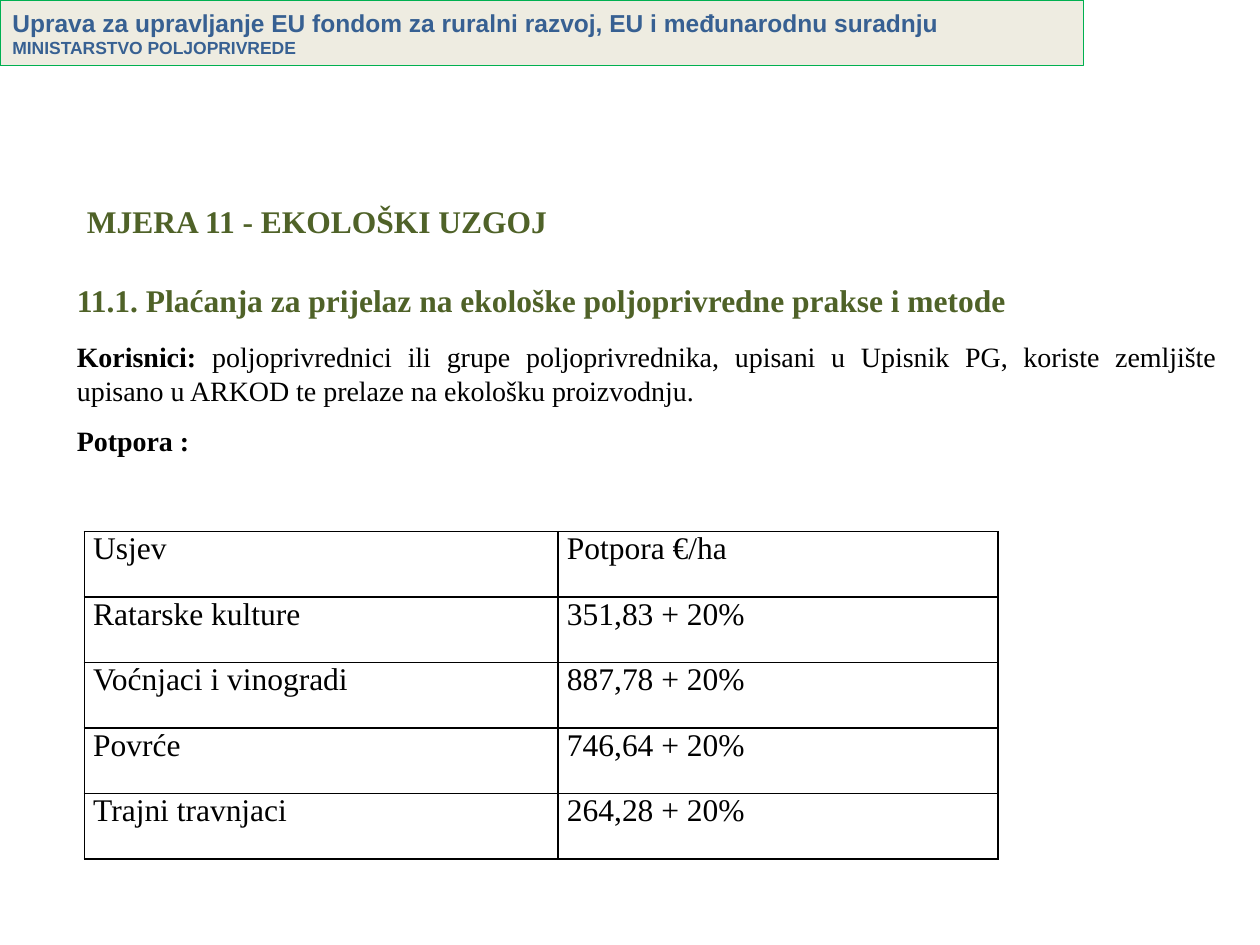
from lxml import etree
from pptx import Presentation
from pptx.dml.color import RGBColor
from pptx.enum.shapes import MSO_SHAPE as Shape
from pptx.enum.text import MSO_ANCHOR as Anchor, PP_ALIGN as Align
from pptx.oxml.ns import qn
from pptx.util import Inches, Pt

GREEN, BLUE, BLACK, WHITE = "4F6228", "376092", "000000", "FFFFFF"
SERIF = "Times New Roman"
CROPS = [
    ("Usjev", "Potpora €/ha"),
    ("Ratarske kulture", "351,83 + 20%"),
    ("Voćnjaci i vinogradi", "887,78 + 20%"),
    ("Povrće", "746,64 + 20%"),
    ("Trajni travnjaci", "264,28 + 20%"),
]


def rgb(value):
    return RGBColor.from_string(value)


def style(font, size, color=BLACK, bold=False, name=SERIF):
    font.name, font.size, font.bold = name, Pt(size), bold
    font.color.rgb = rgb(color)


def place(shape, left, top, width, height):
    shape.left, shape.top = Inches(left), Inches(top)
    shape.width, shape.height = Inches(width), Inches(height)


def add_header(page, left, top, width, height):
    band = page.shapes.add_shape(
        Shape.RECTANGLE, Inches(left), Inches(top), Inches(width), Inches(height))
    band.shadow.inherit = False
    band.fill.solid()
    band.fill.fore_color.rgb = rgb("EEECE1")
    band.line.color.rgb = rgb("00B050")
    band.line.width = Pt(0.75)
    frame = band.text_frame
    frame.vertical_anchor = Anchor.MIDDLE
    frame.text = ("Uprava za upravljanje EU fondom za ruralni razvoj, "
                  "EU i međunarodnu suradnju\nMINISTARSTVO POLJOPRIVREDE")
    for para, size in zip(frame.paragraphs, (14, 10)):
        para.alignment = Align.LEFT
        style(para.font, size, BLUE, True, "Arial")


def fill_title(title, *box):
    place(title, *box)
    frame = title.text_frame
    frame.text = "MJERA 11 - EKOLOŠKI UZGOJ"
    frame.vertical_anchor = Anchor.TOP
    para = frame.paragraphs[0]
    para.alignment = Align.LEFT
    style(para.font, 18, GREEN, True)


def add_body_para(para, *texts, align=Align.JUSTIFY, before=0, after=0):
    """Fill an unbulleted paragraph with one run per text."""
    properties = para._p.get_or_add_pPr()
    properties.set("marL", "0")
    properties.set("indent", "0")
    etree.SubElement(properties, qn("a:buNone"))
    para.alignment = align
    para.space_before, para.space_after = Pt(before), Pt(after)
    for text in texts:
        para.add_run().text = text


def fill_body(body, *box):
    place(body, *box)
    frame = body.text_frame
    heading = frame.paragraphs[0]
    add_body_para(heading, "11.1. Plaćanja za prijelaz na ekološke poljoprivredne prakse i metode",
                  align=Align.LEFT)
    style(heading.font, 18, GREEN, True)

    users = frame.add_paragraph()
    add_body_para(users, "Korisnici: ",
                  "poljoprivrednici ili grupe poljoprivrednika, upisani u Upisnik PG, "
                  "koriste zemljište upisano u ARKOD te prelaze na ekološku proizvodnju.",
                  before=12, after=6)
    style(users.font, 16)
    users.runs[0].font.bold = True

    support = frame.add_paragraph()
    add_body_para(support, "Potpora :", before=3.2)
    style(support.font, 16, bold=True)


def add_borders(cell):
    properties = cell._tc.get_or_add_tcPr()
    for index, side in enumerate(("lnL", "lnR", "lnT", "lnB")):
        line = etree.Element(qn(f"a:{side}"), w=str(Pt(1)))
        fill = etree.SubElement(line, qn("a:solidFill"))
        etree.SubElement(fill, qn("a:srgbClr"), val=BLACK)
        properties.insert(index, line)


def add_crop_table(page, left, top, widths, row_height):
    table = page.shapes.add_table(
        len(CROPS), len(widths), Inches(left), Inches(top),
        Inches(sum(widths)), Inches(row_height * len(CROPS))).table
    table.first_row = table.horz_banding = False
    for column, width in zip(table.columns, widths):
        column.width = Inches(width)
    for row, texts in zip(table.rows, CROPS):
        row.height = Inches(row_height)
        for cell, text in zip(row.cells, texts):
            cell.text = text
            cell.margin_left = cell.margin_right = Inches(0.07)
            cell.margin_top = cell.margin_bottom = 0
            cell.fill.solid()
            cell.fill.fore_color.rgb = rgb(WHITE)
            add_borders(cell)
            para = cell.text_frame.paragraphs[0]
            para.alignment = Align.JUSTIFY
            para.space_after = Pt(6)
            style(para.font, 18)


def main():
    deck = Presentation()
    deck.slide_width, deck.slide_height = Inches(10), Inches(7.5)
    page = deck.slides.add_slide(deck.slide_layouts[1])
    add_header(page, 0, 0, 8.6, 0.52)
    fill_body(page.placeholders[1], 0.51, 2.18, 9.25, 5.48)
    fill_title(page.shapes.title, 0.59, 1.55, 8.35, 0.4)
    add_crop_table(page, 0.67, 4.22, (3.76, 3.49), 0.52)
    deck.save("out.pptx")


if __name__ == "__main__":
    main()
